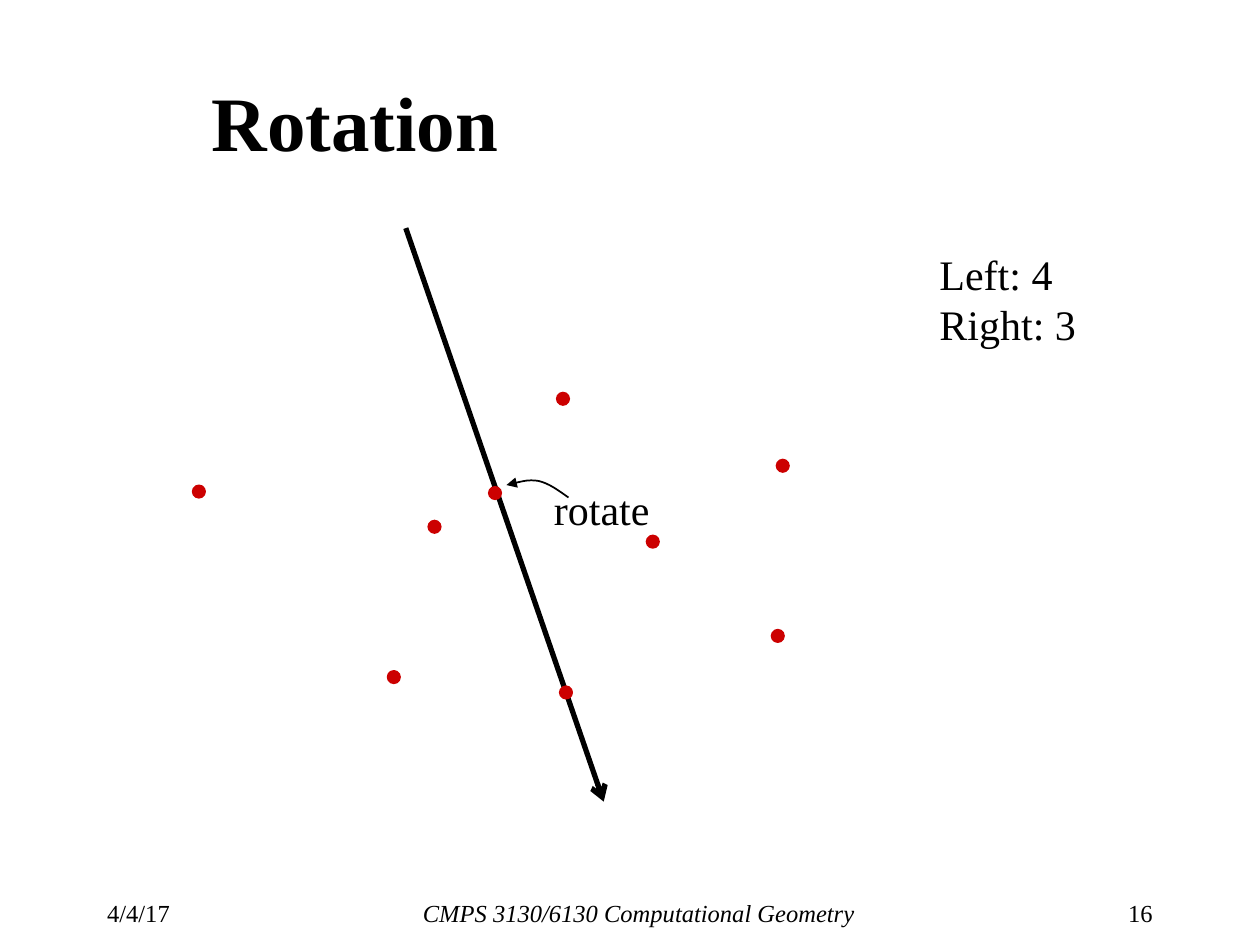
"""Build the slide on rotating a line through a set of points."""
from dataclasses import dataclass

from lxml.etree import SubElement
from pptx import Presentation
from pptx.dml.color import RGBColor
from pptx.enum.shapes import MSO_CONNECTOR, MSO_SHAPE
from pptx.enum.text import MSO_ANCHOR, MSO_AUTO_SIZE, PP_ALIGN
from pptx.oxml.ns import qn
from pptx.util import Cm, Pt


@dataclass(frozen=True)
class Theme:
    font: str = "Times New Roman"
    ink: RGBColor = RGBColor(0, 0, 0)
    point: RGBColor = RGBColor(0xCC, 0, 0)
    title_size: int = 44
    label_size: int = 24
    footer_size: int = 14
    ray_width: float = 3
    thin_width: float = 1
    dot_size: float = 0.25


@dataclass(frozen=True)
class Point:
    x: float
    y: float


@dataclass(frozen=True)
class Label:
    lines: tuple[str, ...]
    left: float
    top: float
    width: float
    height: float
    size: int
    align: PP_ALIGN = PP_ALIGN.LEFT
    italic: bool = False
    bold: bool = False
    wrap: bool = True


THEME = Theme()
FOOTER_TOP, FOOTER_HEIGHT = 17.98, 0.64
TITLE = Label(("Rotation",), 4.01, 0.84, 20.96, 3.18, THEME.title_size, bold=True)
LABELS = (
    Label(("4/4/17",), 1.91, FOOTER_TOP, 2.41, FOOTER_HEIGHT, THEME.footer_size),
    Label(("CMPS 3130/6130 Computational Geometry",), 4.83, FOOTER_TOP, 16.1,
          FOOTER_HEIGHT, THEME.footer_size, PP_ALIGN.CENTER, italic=True),
    Label(("16",), 21.41, FOOTER_TOP, 2.08, FOOTER_HEIGHT, THEME.footer_size,
          PP_ALIGN.RIGHT),
    Label(("Left: 4", "Right: 3"), 18.69, 4.88, 3.28, 2.31, THEME.label_size,
          wrap=False),
    Label(("rotate",), 10.9, 9.63, 2.46, 1.27, THEME.label_size,
          PP_ALIGN.CENTER, wrap=False),
)
RAY_START, RAY_TIP = Point(8.18, 4.6), Point(12.17, 16.16)
POINTS = (
    Point(7.94, 13.65), Point(11.41, 13.96), Point(13.16, 10.92),
    Point(15.68, 12.82), Point(11.35, 8.04), Point(15.78, 9.39),
    Point(8.76, 10.62), Point(4.01, 9.91), Point(9.98, 9.94),
)
ROTATION_CURVES = (
    (Point(11.46, 10.03), Point(11.25, 9.88), Point(11.07, 9.75), Point(10.87, 9.7)),
    (Point(10.87, 9.7), Point(10.64, 9.65), Point(10.44, 9.73), Point(10.21, 9.78)),
)


def write_text(box, label: Label) -> None:
    """Place a text shape and write its lines run by run."""
    box.left, box.top = Cm(label.left), Cm(label.top)
    box.width, box.height = Cm(label.width), Cm(label.height)
    frame = box.text_frame
    frame.word_wrap = label.wrap
    frame.auto_size = MSO_AUTO_SIZE.NONE if label.wrap else MSO_AUTO_SIZE.SHAPE_TO_FIT_TEXT
    para = frame.paragraphs[0]
    para.alignment = label.align
    for index, line in enumerate(label.lines):
        if index:
            para.add_line_break()
        span = para.add_run()
        span.text = line
        span.font.name = THEME.font
        span.font.size = Pt(label.size)
        span.font.bold = label.bold
        span.font.italic = label.italic
        span.font.color.rgb = THEME.ink


def style_arrow(arrow, width: float, tip: str) -> None:
    """Colour a line and put an arrowhead at its end."""
    arrow.line.color.rgb = THEME.ink
    arrow.line.width = Pt(width)
    outline = arrow.element.spPr.find(qn("a:ln"))
    SubElement(outline, qn("a:tailEnd"), type=tip)


def draw_ray(page, start: Point, tip: Point) -> None:
    """Draw the directed line."""
    ray = page.shapes.add_connector(
        MSO_CONNECTOR.STRAIGHT, Cm(start.x), Cm(start.y), Cm(tip.x), Cm(tip.y))
    style_arrow(ray, THEME.ray_width, "arrow")
    SubElement(ray.element.spPr, qn("a:effectLst"))


def draw_point(page, centre: Point) -> None:
    """Draw one point of the set as a dot."""
    size = THEME.dot_size
    dot = page.shapes.add_shape(
        MSO_SHAPE.OVAL, Cm(centre.x - size / 2), Cm(centre.y - size / 2),
        Cm(size), Cm(size))
    dot.shadow.inherit = False
    dot.fill.solid()
    dot.fill.fore_color.rgb = THEME.point
    dot.line.color.rgb = THEME.point
    dot.line.width = Pt(THEME.thin_width)


def curve_position(curve: tuple[Point, ...], t: float) -> tuple[int, int]:
    """Return the position on a cubic curve at parameter t."""
    weights = ((1 - t) ** 3, 3 * t * (1 - t) ** 2, 3 * t ** 2 * (1 - t), t ** 3)
    x = sum(weight * knot.x for weight, knot in zip(weights, curve))
    y = sum(weight * knot.y for weight, knot in zip(weights, curve))
    return Cm(x), Cm(y)


def draw_rotation(page, curves: tuple[tuple[Point, ...], ...], steps: int = 8) -> None:
    """Draw the curved arrow that shows the rotation."""
    start = curves[0][0]
    builder = page.shapes.build_freeform(Cm(start.x), Cm(start.y))
    positions = [curve_position(curve, step / steps)
                 for curve in curves for step in range(1, steps + 1)]
    builder.add_line_segments(positions, close=False)
    arc = builder.convert_to_shape()
    arc.shadow.inherit = False
    arc.fill.background()
    style_arrow(arc, THEME.thin_width, "triangle")


def main() -> None:
    """Build and save the deck."""
    deck = Presentation()
    deck.slide_width, deck.slide_height = Cm(25.4), Cm(19.05)
    page = deck.slides.add_slide(deck.slide_layouts[5])
    write_text(page.shapes.title, TITLE)
    page.shapes.title.text_frame.vertical_anchor = MSO_ANCHOR.MIDDLE
    draw_ray(page, RAY_START, RAY_TIP)
    for centre in POINTS:
        draw_point(page, centre)
    draw_rotation(page, ROTATION_CURVES)
    for label in LABELS:
        box = page.shapes.add_textbox(
            Cm(label.left), Cm(label.top), Cm(label.width), Cm(label.height))
        write_text(box, label)
    deck.save("out.pptx")


if __name__ == "__main__":
    main()
